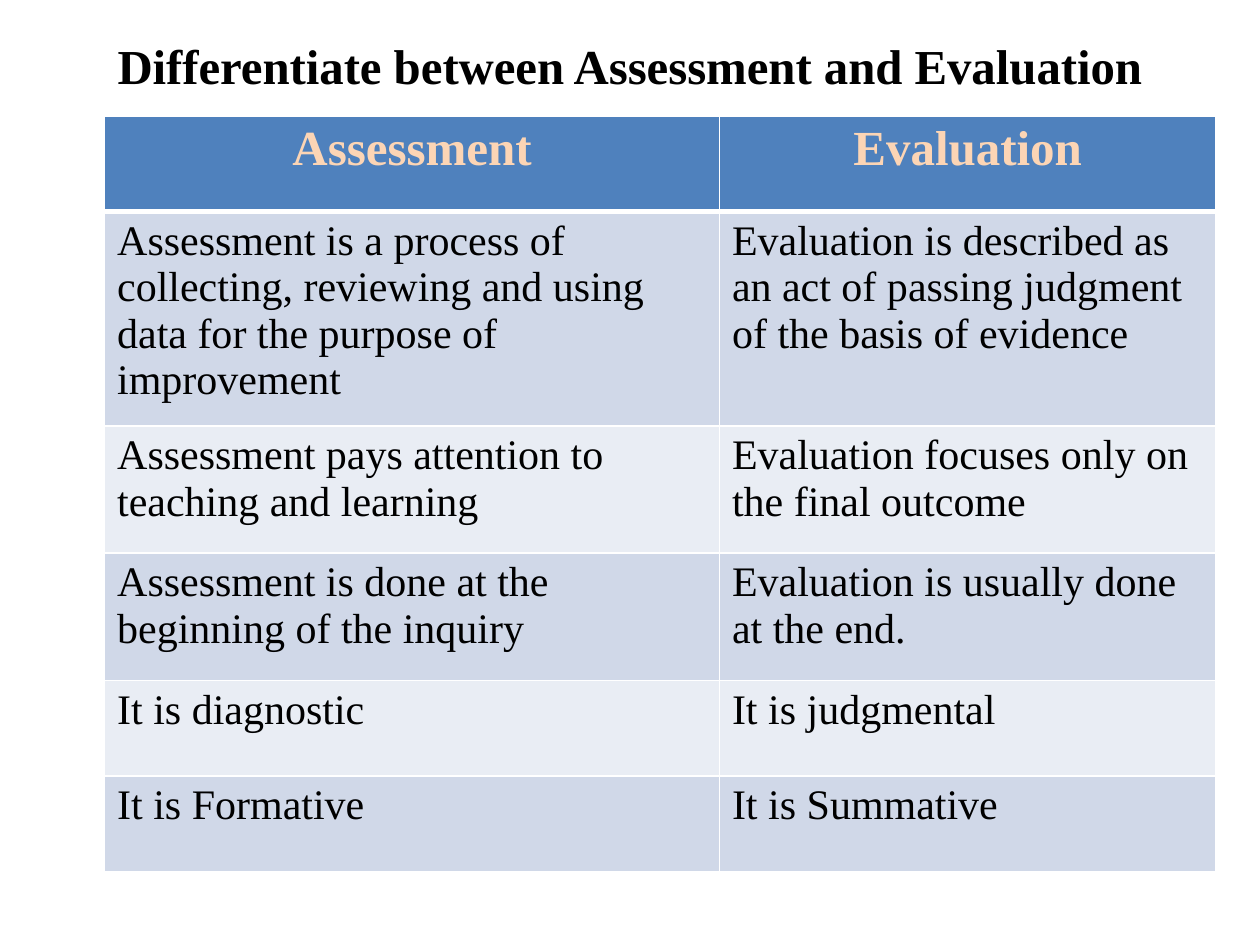
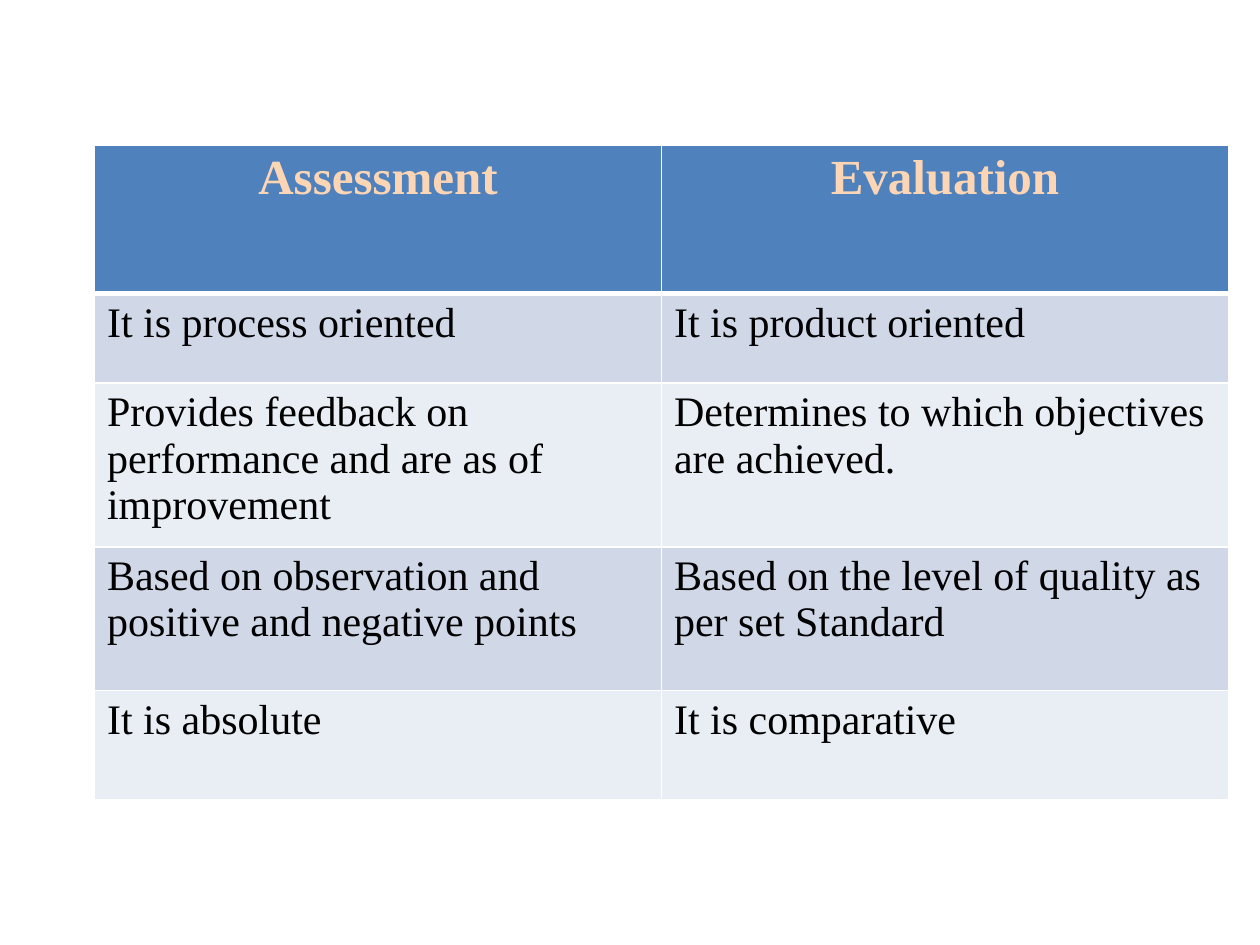
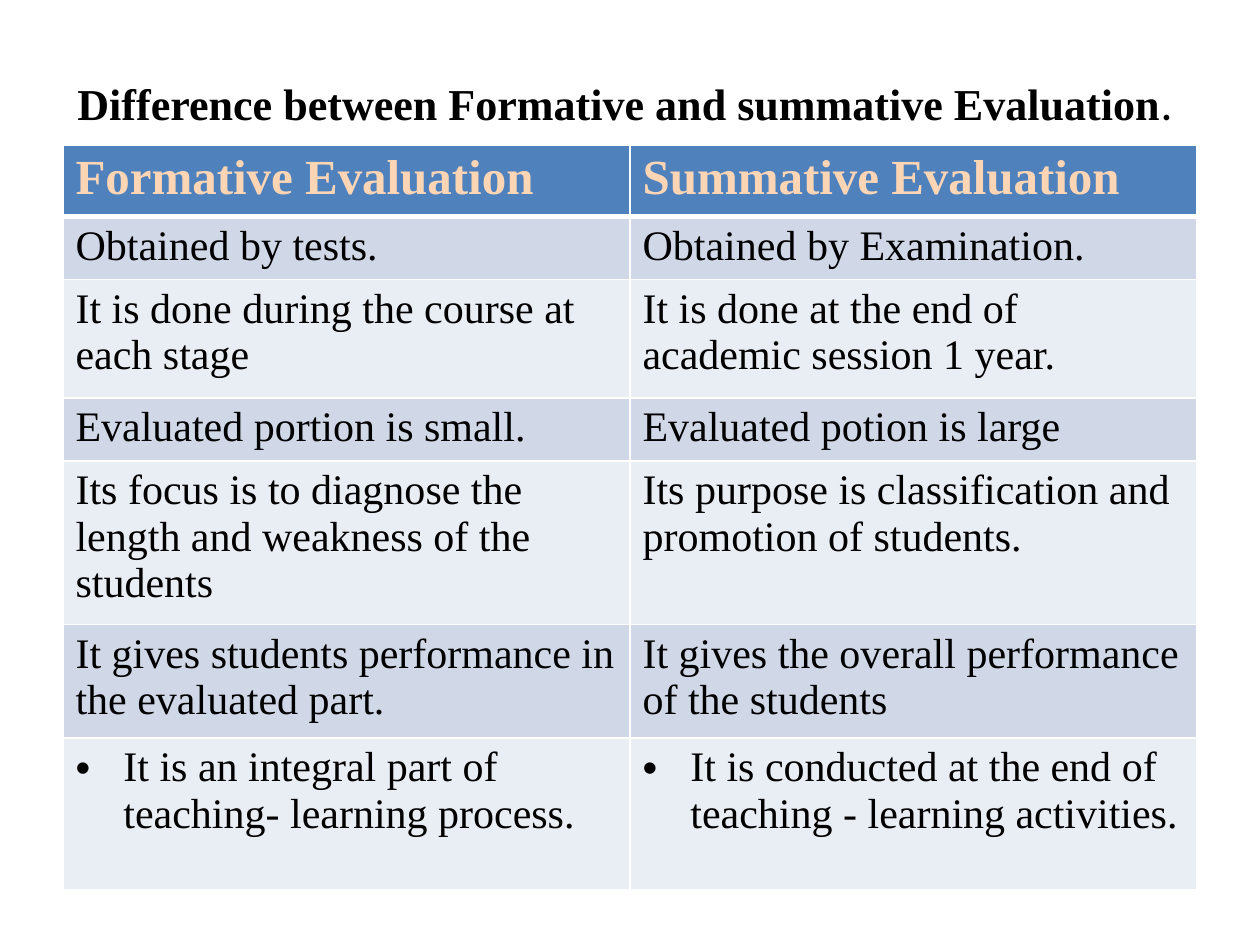
from copy import deepcopy
from lxml import etree
from pptx import Presentation
from pptx import util as u
from pptx.dml.color import RGBColor
from pptx.enum import text
from pptx.oxml.ns import qn

# Shared style
SERIF = "Times New Roman"
BLACK, WHITE = "000000", "FFFFFF"
HEAD_FILL, HEAD_TEXT = "4F81BD", "FCD5B5"
BANDS = ["D0D8E8", "E9EDF4"]
CENTER, LEFT = text.PP_ALIGN.CENTER, text.PP_ALIGN.LEFT


def add_run(p, words, size, color, bold, font=SERIF):
    r = p.add_run()
    r.text = words
    r.font.name = font
    r.font.size = u.Pt(size)
    r.font.bold = bold
    r.font.color.rgb = RGBColor.from_string(color)
    # The same face for other scripts keeps the line height even
    r_pr = r._r.get_or_add_rPr()
    for tag in ("a:ea", "a:cs"):
        etree.SubElement(r_pr, qn(tag), typeface=font)
    return r_pr


def add_borders(cell, widths):
    tc_pr = cell._tc.get_or_add_tcPr()
    for i, (side, width) in enumerate(widths.items()):
        ln = etree.Element(qn("a:ln" + side), w=str(u.Pt(width)))
        fill = etree.SubElement(ln, qn("a:solidFill"))
        etree.SubElement(fill, qn("a:srgbClr"), val=WHITE)
        tc_pr.insert(i, ln)


# Titles: box and runs; tables: place, column widths, row heights and rows
slides = [
    {
        "title_box": (0.5, 0.21, 9, 0.61),
        "title": [("Differentiate between Assessment and Evaluation", 27.9, True, SERIF)],
        "at": (0.83, 0.92),
        "cols": [4.88, 3.94],
        "heights": [0.76, 1.57, 1.01, 1.01, 0.76, 0.76],
        "head_align": CENTER,
        "rows": [
            ("Assessment", "Evaluation"),
            ("Assessment is a process of collecting, reviewing and using data for the purpose of improvement",
             "Evaluation is described as an act of passing judgment of the basis of evidence"),
            ("Assessment pays attention to teaching and learning",
             "Evaluation focuses only on the final outcome"),
            ("Assessment is done at the beginning of the inquiry",
             "Evaluation is usually done at the end."),
            ("It is diagnostic", "It is judgmental"),
            ("It is Formative", "It is Summative"),
        ],
    },
    {
        "at": (0.75, 1.15),
        "cols": [4.5, 4.5],
        "heights": [1.18, 0.71, 1.2, 1.14, 0.87],
        "head_align": CENTER,
        "rows": [
            ("Assessment", "Evaluation"),
            ("It is process oriented", "It is product oriented"),
            ("Provides feedback on performance and are as of improvement",
             "Determines to which objectives are achieved."),
            ("Based on observation and positive and negative points",
             "Based on the level of quality as per set Standard"),
            ("It is absolute", "It is comparative"),
        ],
    },
    {
        "title_box": (0.46, 0.3, 9, 1.01),
        "title": [("Difference between Formative and summative Evaluation", 25.2, True, SERIF),
                  (".", 27, False, "Calibri")],
        "at": (0.5, 1.15),
        "cols": [4.5, 4.5],
        "heights": [0.52, 0.47, 0.94, 0.47, 1.2, 0.84, 1.2],
        "head_align": LEFT,
        "bullet_row": 6,
        "rows": [
            ("Formative Evaluation", "Summative Evaluation"),
            ("Obtained by tests.", "Obtained by Examination."),
            ("It is done during the course at each stage",
             "It is done at the end of academic session 1 year."),
            ("Evaluated portion is small.", "Evaluated potion is large"),
            ("Its focus is to diagnose the length and weakness of the students",
             "Its purpose is classification and promotion of students."),
            ("It gives students performance in the evaluated part.",
             "It gives the overall performance of the students"),
            ("It is an integral part of teaching- learning process.",
             "It is conducted at the end of teaching - learning activities."),
        ],
    },
]

prs = Presentation()
prs.slide_width, prs.slide_height = u.Inches(10), u.Inches(7.5)

for data in slides:
    s = prs.slides.add_slide(prs.slide_layouts[6])

    # Title
    if "title" in data:
        sp = s.shapes.add_textbox(*[u.Inches(v) for v in data["title_box"]])
        tf = sp.text_frame
        tf.word_wrap = True
        tf.vertical_anchor = text.MSO_ANCHOR.MIDDLE
        p = tf.paragraphs[0]
        p.alignment = CENTER
        for words, size, bold, font in data["title"]:
            add_run(p, words, size, BLACK, bold, font)

    # Comparison table
    size = (sum(data["cols"]), sum(data["heights"]))
    frame = s.shapes.add_table(len(data["rows"]), len(data["cols"]),
                               *[u.Inches(v) for v in data["at"] + size])
    table = frame.table
    table.first_row = table.horz_banding = False
    for col, width in zip(table.columns, data["cols"]):
        col.width = u.Inches(width)
    for row, height in zip(table.rows, data["heights"]):
        row.height = u.Inches(height)

    for i, words_row in enumerate(data["rows"]):
        head = i == 0
        for j, words in enumerate(words_row):
            cell = table.cell(i, j)
            cell.fill.solid()
            fill = HEAD_FILL if head else BANDS[(i - 1) % 2]
            cell.fill.fore_color.rgb = RGBColor.from_string(fill)
            add_borders(cell, {"L": 1, "R": 1, "T": 3 if i == 1 else 1, "B": 3 if head else 1})
            p = cell.text_frame.paragraphs[0]
            p.alignment = data["head_align"] if head else LEFT
            if i == data.get("bullet_row"):
                p_pr = p._p.get_or_add_pPr()
                p_pr.set("marL", str(u.Inches(0.38)))
                p_pr.set("indent", str(u.Inches(-0.38)))
                etree.SubElement(p_pr, qn("a:buFont"), typeface="Arial")
                etree.SubElement(p_pr, qn("a:buChar"), char="•")
            r_pr = add_run(p, words, 28 if head else 24, HEAD_TEXT if head else BLACK, head)
            # The paragraph end takes the run's format, so rows keep their height
            end = etree.SubElement(p._p, qn("a:endParaRPr"), **dict(r_pr.attrib))
            end.extend(deepcopy(list(r_pr)))

prs.save("out.pptx")
